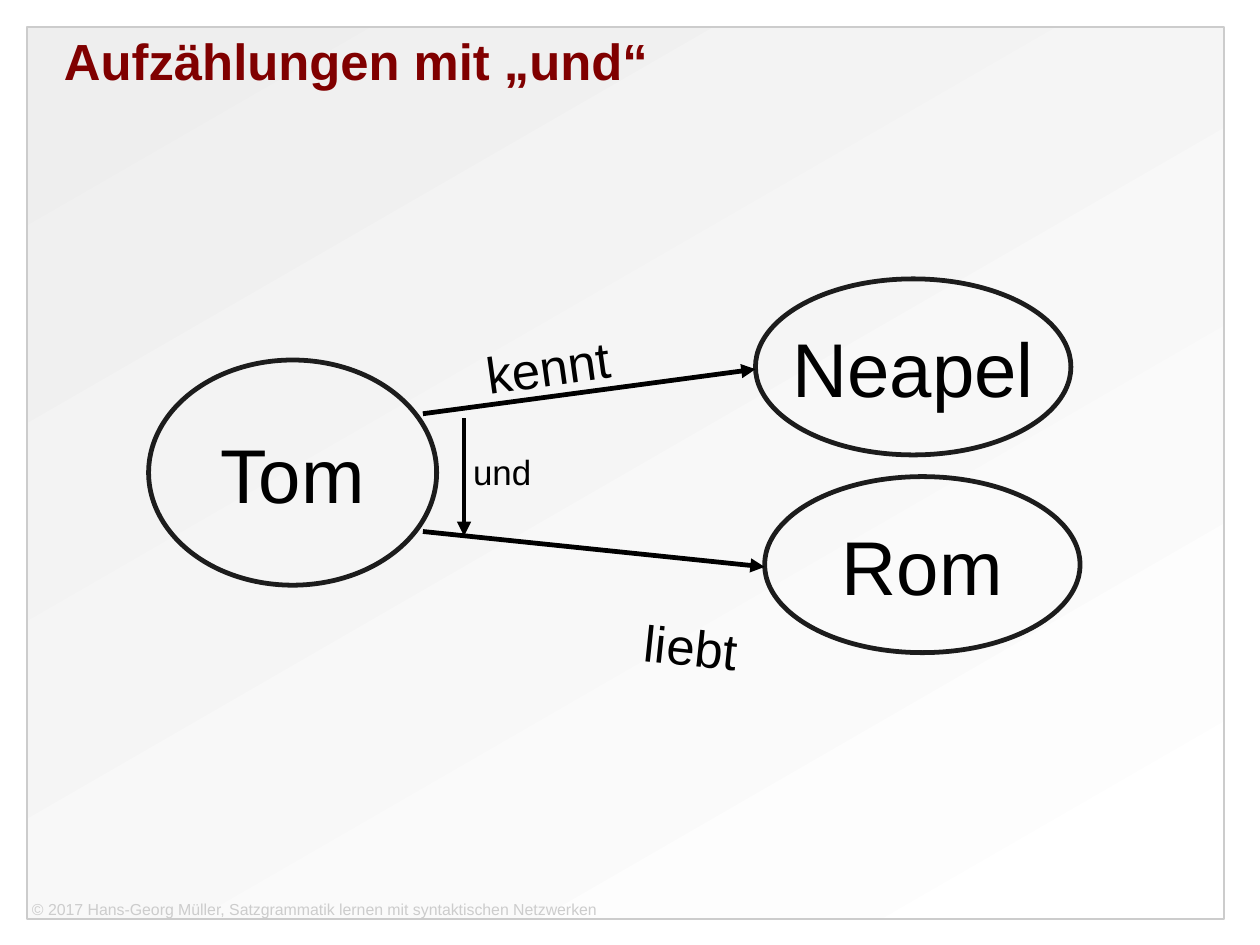
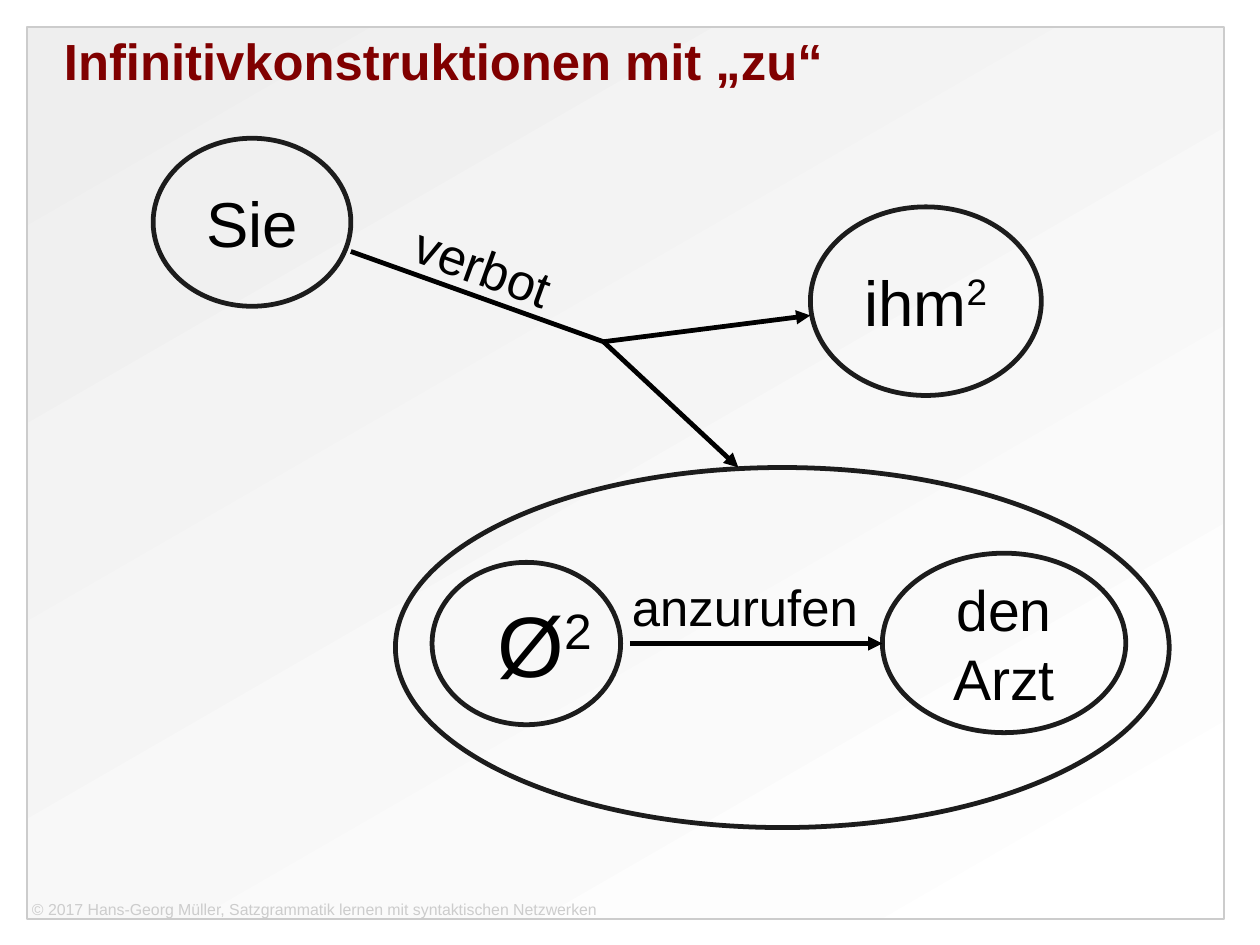
from pptx import Presentation
from pptx.dml.color import RGBColor
from pptx.enum.shapes import MSO_CONNECTOR, MSO_SHAPE
from pptx.enum.text import MSO_ANCHOR, PP_ALIGN
from pptx.oxml.ns import qn
from pptx.util import Cm, Inches, Pt
from lxml.etree import SubElement

FONT = "Arial"
BLACK, OUTLINE, TITLE_RED, GREY = "000000", "1C1C1C", "800000", "CCCCCC"
GRADIENT = ("EEEEEE", "FFFFFF")
LINE_WIDTH = 3
FOOTER = "© 2017 Hans-Georg Müller, Satzgrammatik lernen mit syntaktischen Netzwerken"


def rgb(color):
    return RGBColor.from_string(color)


def set_line(shape, color, width=LINE_WIDTH):
    shape.line.color.rgb = rgb(color)
    shape.line.width = Pt(width)


def set_insets(frame, left, top, right, bottom):
    frame.margin_left, frame.margin_top = Inches(left), Inches(top)
    frame.margin_right, frame.margin_bottom = Inches(right), Inches(bottom)


def write_text(frame, text, size, color=BLACK, bold=False, align=PP_ALIGN.LEFT, superscript=""):
    """Write one paragraph per line of text; superscript follows the last one."""
    frame.text = text
    for paragraph in frame.paragraphs:
        paragraph.alignment = align
        font = paragraph.font
        font.name, font.size, font.bold = FONT, Pt(size), bold
        font.color.rgb = rgb(color)
    if superscript:
        run = frame.paragraphs[-1].add_run()
        run.text = superscript
        run.font._element.set("baseline", "33000")


def add_label(slide, text, left, top, width, height=0.64, size=32, color=BLACK,
              bold=False, rotation=0, insets=(0.1, 0.05, 0.1, 0.05)):
    box = slide.shapes.add_textbox(Inches(left), Inches(top), Inches(width), Inches(height))
    box.rotation = rotation
    box.text_frame.word_wrap = True
    set_insets(box.text_frame, *insets)
    write_text(box.text_frame, text, size, color, bold)


def add_node(slide, left, top, width, height, text="", size=48, superscript="",
             align=PP_ALIGN.CENTER, insets=(0.12, 0.07, 0.12, 0.07)):
    """Add an unfilled ellipse of the network, with text if it has any."""
    node = slide.shapes.add_shape(MSO_SHAPE.OVAL, Inches(left), Inches(top),
                                  Inches(width), Inches(height))
    node.shadow.inherit = False
    node.fill.background()
    set_line(node, OUTLINE)
    if text:
        frame = node.text_frame
        frame.word_wrap = False
        frame.vertical_anchor = MSO_ANCHOR.MIDDLE
        set_insets(frame, *insets)
        write_text(frame, text, size, align=align, superscript=superscript)


def add_edge(slide, start, end, arrow=True):
    points = [Inches(value) for value in (*start, *end)]
    edge = slide.shapes.add_connector(MSO_CONNECTOR.STRAIGHT, *points)
    set_line(edge, BLACK)
    if arrow:
        SubElement(edge.line._get_or_add_ln(), qn("a:tailEnd"), type="triangle")
    SubElement(edge._element.spPr, qn("a:effectLst"))


def add_slide(presentation, title):
    """Add a slide with the shared background panel, footer and title."""
    slide = presentation.slides.add_slide(presentation.slide_layouts[6])
    panel = slide.shapes.add_shape(MSO_SHAPE.RECTANGLE, Inches(0.24), Inches(0.24),
                                   Inches(10.47), Inches(7.8))
    panel.shadow.inherit = False
    panel.fill.gradient()
    panel.fill.gradient_angle = 300
    for stop, color in zip(panel.fill.gradient_stops, GRADIENT):
        stop.color.rgb = rgb(color)
    set_line(panel, GREY, 1.25)
    add_label(slide, FOOTER, 0.24, 7.87, 10.47, 0.16, size=10, color=GREY,
              insets=(0.04, 0, 0, 0))
    add_label(slide, title, 0.56, 0.26, 9.92, 1, color=TITLE_RED, bold=True,
              insets=(0, 0, 0, 0))
    return slide


def build_enumeration(presentation):
    slide = add_slide(presentation, "Aufzählungen mit „und“")
    add_node(slide, 1.3, 3.15, 2.52, 1.97, "Tom")
    add_node(slide, 6.61, 2.44, 2.76, 1.54, "Neapel")
    add_node(slide, 6.69, 4.17, 2.76, 1.54, "Rom")
    add_edge(slide, (3.7, 3.62), (6.61, 3.23))
    add_edge(slide, (3.7, 4.65), (6.69, 4.96))
    add_edge(slide, (4.06, 3.66), (4.06, 4.69))
    add_label(slide, "und", 4.04, 3.89, 0.71, 0.44, size=22)
    add_label(slide, "kennt", 4.15, 2.88, 1.35, rotation=-8)
    add_label(slide, "liebt", 5.54, 5.35, 1.27, rotation=6.1)


def build_infinitive(presentation):
    slide = add_slide(presentation, "Infinitivkonstruktionen mit „zu“")
    fork = (5.28, 2.99)
    add_node(slide, 1.34, 1.21, 1.73, 1.47, "Sie", 40)
    add_node(slide, 7.09, 1.81, 2.02, 1.65, "ihm", 40, superscript="2")
    add_node(slide, 3.46, 4.09, 6.77, 3.15)
    add_node(slide, 3.78, 4.92, 1.65, 1.42, "Ø", 54, superscript="2",
             align=PP_ALIGN.LEFT, insets=(0.33, 0.07, 0, 0.07))
    add_node(slide, 7.72, 4.84, 2.13, 1.57, "den\nArzt", 36)
    add_edge(slide, (3.07, 2.2), fork, arrow=False)
    add_edge(slide, fork, (7.09, 2.76))
    add_edge(slide, fork, (6.46, 4.09))
    add_edge(slide, (5.51, 5.63), (7.72, 5.63))
    add_label(slide, "anzurufen", 5.43, 4.99, 2.29)
    add_label(slide, "verbot", 3.51, 2.02, 1.49, rotation=20)


def main():
    presentation = Presentation()
    presentation.slide_width = Cm(28)
    presentation.slide_height = Cm(21)
    build_enumeration(presentation)
    build_infinitive(presentation)
    presentation.save("out.pptx")


if __name__ == "__main__":
    main()
